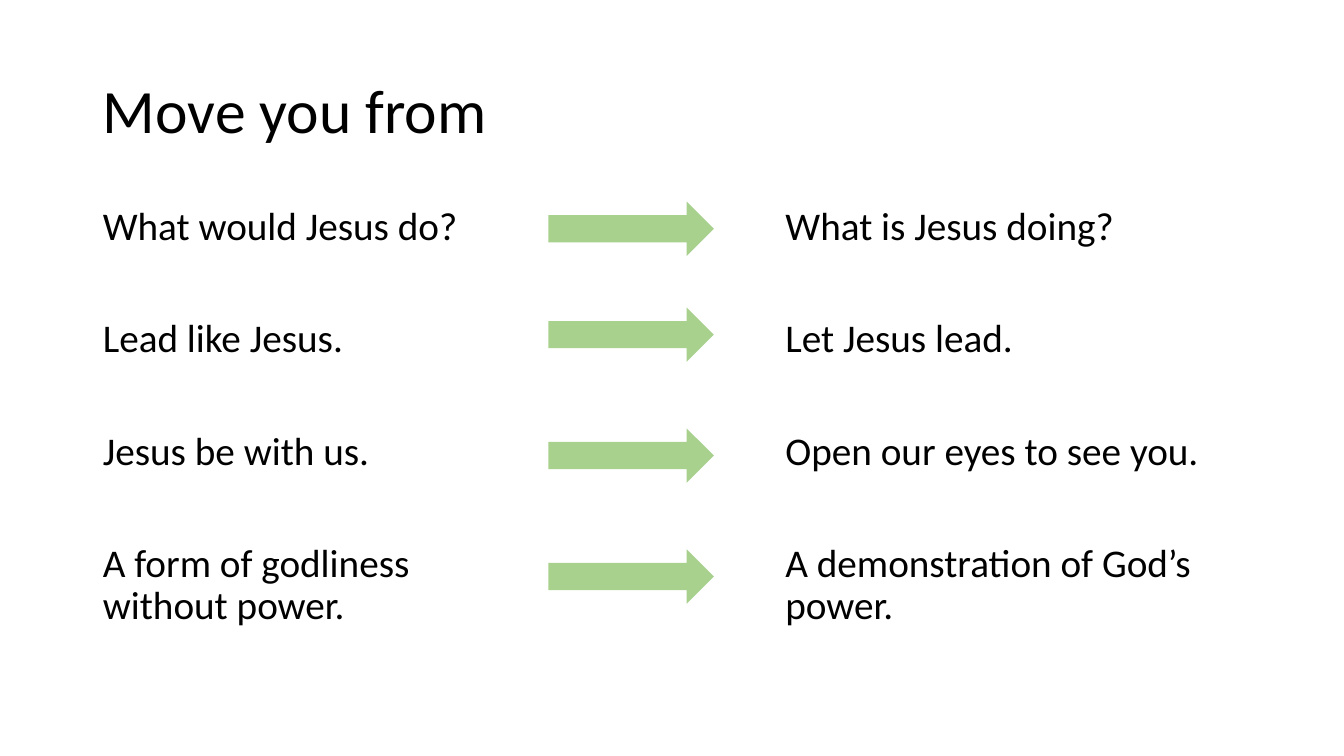
from dataclasses import dataclass

from pptx import Presentation
from pptx.dml.color import RGBColor
from pptx.enum.shapes import MSO_SHAPE as Preset
from pptx.enum.text import MSO_ANCHOR as Anchor, MSO_AUTO_SIZE as AutoSize, PP_ALIGN as Align
from pptx.oxml.ns import qn
from pptx.util import Inches, Pt


@dataclass(frozen=True)
class Theme:
    font: str = "Calibri"
    text: RGBColor = RGBColor(0x00, 0x00, 0x00)
    arrow: RGBColor = RGBColor(0xA9, 0xD1, 0x8E)
    title_size: Pt = Pt(44)
    list_size: Pt = Pt(28)
    line_spacing: float = 0.9
    item_gap: Pt = Pt(50)


THEME = Theme()
TITLE = "Move you from"
SHIFTS = [
    ("What would Jesus do?", "What is Jesus doing?", 2),
    ("Lead like Jesus.", "Let Jesus lead.", 3.05),
    ("Jesus be with us.", "Open our eyes to see you.", 4.25),
    ("A form of godliness without power.", "A demonstration of God’s power.", 5.45),
]


def apply_format(target, values):
    for name, value in values.items():
        setattr(target, name, value)


def place(shape, left, top, width, height):
    apply_format(shape, {
        "left": Inches(left), "top": Inches(top),
        "width": Inches(width), "height": Inches(height),
    })


def write_paragraph(paragraph, wording, size, gap):
    paragraph.text = wording
    apply_format(paragraph, {
        "alignment": Align.LEFT, "line_spacing": THEME.line_spacing,
        "space_before": gap, "space_after": Pt(0),
    })
    apply_format(paragraph.font, {"name": THEME.font, "size": size})
    paragraph.font.color.rgb = THEME.text


def remove_bullet(paragraph):
    properties = paragraph._p.get_or_add_pPr()
    properties.set("marL", "0")
    properties.set("indent", "0")
    properties.append(properties.makeelement(qn("a:buNone"), {}))


def fill_placeholder(placeholder, box, anchor):
    place(placeholder, *box)
    frame = placeholder.text_frame
    apply_format(frame, {
        "word_wrap": True, "auto_size": AutoSize.NONE, "vertical_anchor": anchor,
    })
    return frame


def write_title(placeholder):
    frame = fill_placeholder(placeholder, (0.92, 0.4, 11.5, 1.45), Anchor.MIDDLE)
    write_paragraph(frame.paragraphs[0], TITLE, THEME.title_size, Pt(0))


def write_list(placeholder, items, left, width):
    frame = fill_placeholder(placeholder, (left, 2, width, 4.76), Anchor.TOP)
    for index, item in enumerate(items):
        paragraph = frame.add_paragraph() if index else frame.paragraphs[0]
        write_paragraph(paragraph, item, THEME.list_size, THEME.item_gap if index else Pt(0))
        remove_bullet(paragraph)


def add_arrow(slide, top):
    arrow = slide.shapes.add_shape(
        Preset.RIGHT_ARROW, Inches(5.44), Inches(top), Inches(1.64), Inches(0.54))
    arrow.shadow.inherit = False
    arrow.fill.solid()
    arrow.fill.fore_color.rgb = THEME.arrow
    arrow.line.fill.background()


def main():
    presentation = Presentation()
    apply_format(presentation, {"slide_width": Inches(13.33), "slide_height": Inches(7.5)})
    slide = presentation.slides.add_slide(presentation.slide_layouts.get_by_name("Two Content"))
    title, from_list, to_list = slide.placeholders
    from_items, to_items, arrow_tops = zip(*SHIFTS)
    write_title(title)
    write_list(from_list, from_items, 0.92, 4.17)
    write_list(to_list, to_items, 7.69, 4.33)
    for top in arrow_tops:
        add_arrow(slide, top)
    presentation.save("out.pptx")


if __name__ == "__main__":
    main()
